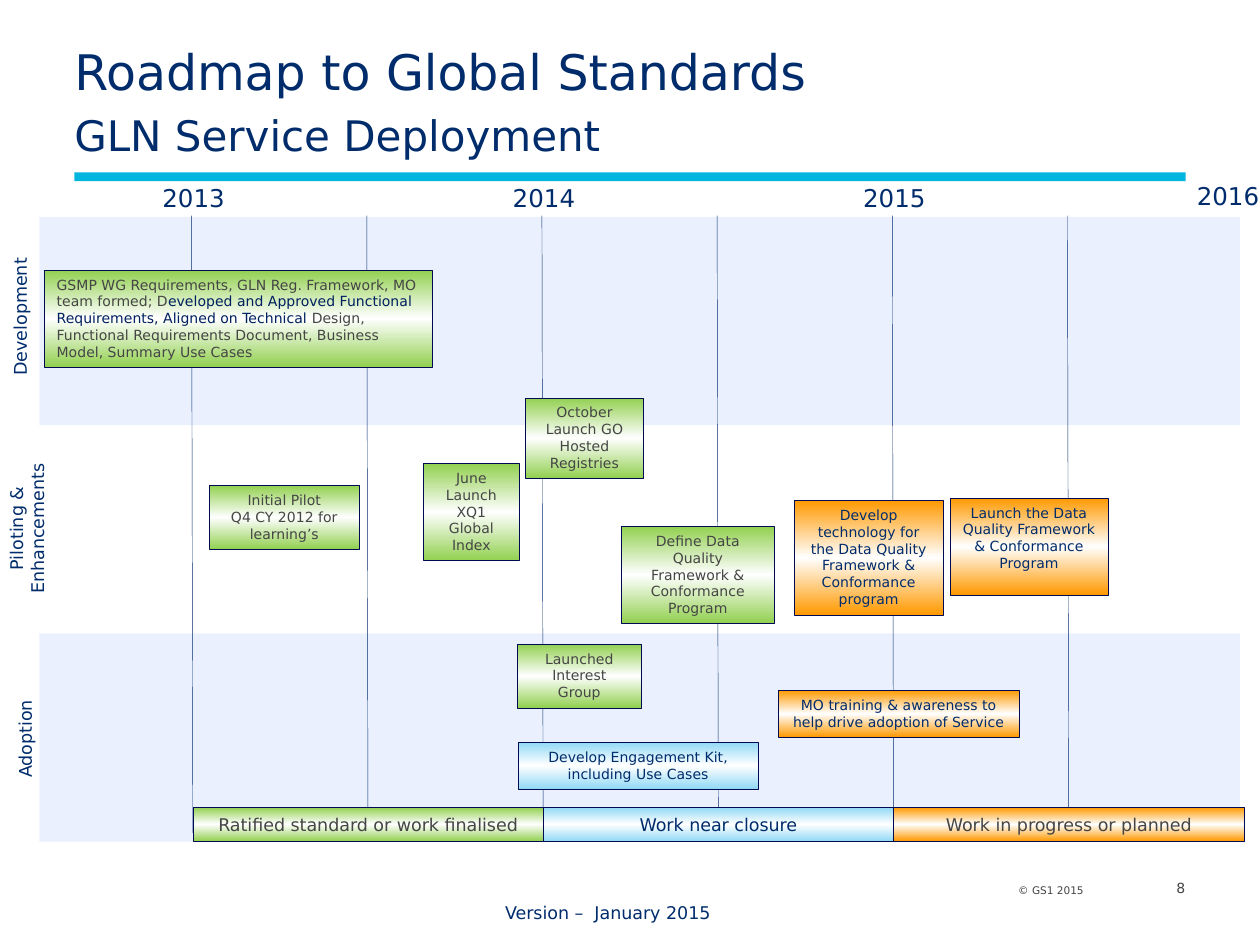
from lxml import etree
from pptx import Presentation
from pptx.dml.color import RGBColor
from pptx.enum.shapes import MSO_CONNECTOR, MSO_SHAPE
from pptx.enum.text import MSO_ANCHOR, MSO_AUTO_SIZE, PP_ALIGN
from pptx.oxml import parse_xml
from pptx.oxml.ns import nsdecls, qn
from pptx.util import Pt

RECT, LINE = MSO_SHAPE.RECTANGLE, MSO_CONNECTOR.STRAIGHT
TOP, MIDDLE = MSO_ANCHOR.TOP, MSO_ANCHOR.MIDDLE
LEFT, CENTER, RIGHT = PP_ALIGN.LEFT, PP_ALIGN.CENTER, PP_ALIGN.RIGHT
GROW, FIXED = MSO_AUTO_SIZE.SHAPE_TO_FIT_TEXT, MSO_AUTO_SIZE.NONE

FONT = "DejaVu Sans"
NAVY = RGBColor(0x00, 0x2C, 0x6C)
DEEP = RGBColor(0x00, 0x20, 0x60)
GREY = RGBColor(0x45, 0x45, 0x45)
OUTLINE = RGBColor(0x00, 0x0A, 0x52)
CYAN = RGBColor(0x00, 0xB6, 0xDE)
BAND = RGBColor(0xEB, 0xF0, 0xFF)
WHITE = RGBColor(0xFF, 0xFF, 0xFF)
GREEN = RGBColor(0x92, 0xD0, 0x50)
BLUE = RGBColor(0x92, 0xD9, 0xF6)
ORANGE = RGBColor(0xFF, 0x99, 0x00)

# Content
TITLE = "Roadmap to Global Standards"
SUBTITLE = "GLN Service Deployment"
YEARS = ["2013", "2014", "2015"]
LEGEND = [
    ("Ratified standard or work finalised", GREEN, GREY),
    ("Work near closure", BLUE, NAVY),
    ("Work in progress or planned", ORANGE, GREY),
]
# Lane name, centre x, centre y, text height
LANES = [
    ("Development", 11.5, 181, 19.4),
    ("Piloting & Enhancements", 21.6, 302, 43.9),
    ("Adoption", 14.4, 422.3, 19.4),
]
SCOPE = [
    ("GSMP WG Requirements, GLN Reg. Framework, MO team formed; D", GREY),
    ("eveloped and Approved Functional Requirements, Aligned on Technical ", DEEP),
    ("Design, Functional Requirements Document, Business Model, "
     "Summary Use Cases", GREY),
]
# Paragraphs, left, top, width, height, fill, text colour
MILESTONES = [
    (["October", "Launch GO Hosted Registries"], 300.2, 227.3, 67.7, 46.1, GREEN, GREY),
    (["June Launch XQ1 Global Index"], 241.9, 264.8, 54.9, 55.6, GREEN, GREY),
    (["Initial Pilot", "Q4 CY 2012 for learning’s"], 119.5, 277.4, 86, 36.4, GREEN, GREY),
    (["Develop Engagement Kit, including Use Cases"], 296.1, 424.2, 137.3, 26.6, BLUE, NAVY),
    (["Launched Interest Group"], 295.6, 368, 70.9, 36.6, GREEN, GREY),
    (["Define Data Quality Framework & Conformance Program"],
     355, 300.8, 87.6, 55.4, GREEN, GREY),
    (["MO training & awareness to help drive adoption of Service"],
     444.8, 394.4, 137.6, 26.9, ORANGE, NAVY),
    (["Develop technology for the Data Quality Framework & Conformance program"],
     453.9, 285.9, 85.1, 65.5, ORANGE, NAVY),
    (["Launch the Data Quality Framework & Conformance Program"],
     542.9, 284.6, 90.3, 55.4, ORANGE, NAVY),
]

# Timeline geometry
AXIS_X, HALF_YEAR = 109.5, 100.1
LANE_X, LANE_Y, LANE_W, LANE_H = 22.5, 124, 686, 119

prs = Presentation()
prs.slide_width, prs.slide_height = Pt(720), Pt(540)
s = prs.slides.add_slide(prs.slide_layouts[5])


def put_text(sp, paragraphs, size, color, align=LEFT, anchor=TOP, wrap=True,
             grow=True, insets=(7.2, 3.6, 7.2, 3.6)):
    tf = sp.text_frame
    tf.word_wrap, tf.vertical_anchor = wrap, anchor
    tf.auto_size = GROW if grow else FIXED
    tf.margin_left, tf.margin_top, tf.margin_right, tf.margin_bottom = map(Pt, insets)
    tf.text = "\n".join(paragraphs)
    for p in tf.paragraphs:
        p.alignment = align
        p.font.name, p.font.size, p.font.color.rgb = FONT, Pt(size), color


def add_label(text, x, y, w, h, size, color, **options):
    sp = s.shapes.add_textbox(Pt(x), Pt(y), Pt(w), Pt(h))
    put_text(sp, [text], size, color, **options)
    return sp


def add_rect(x, y, w, h, color):
    sp = s.shapes.add_shape(RECT, Pt(x), Pt(y), Pt(w), Pt(h))
    sp.shadow.inherit = False
    sp.fill.solid()
    sp.fill.fore_color.rgb = color
    sp.line.fill.background()
    return sp


def add_box(paragraphs, x, y, w, h, fill, color, size=8, align=CENTER):
    sp = add_rect(x, y, w, h, fill)
    # Vertical gradient, white in the middle
    stops = "".join(f'<a:gs pos="{pos}"><a:srgbClr val="{c}"/></a:gs>'
                    for pos, c in ((0, fill), (50000, WHITE), (100000, fill)))
    solid = sp.element.spPr.find(qn("a:solidFill"))
    sp.element.spPr.replace(solid, parse_xml(
        f'<a:gradFill {nsdecls("a")} rotWithShape="1"><a:gsLst>{stops}</a:gsLst>'
        '<a:lin ang="5400000" scaled="0"/></a:gradFill>'))
    sp.line.color.rgb, sp.line.width = OUTLINE, Pt(0.25)
    put_text(sp, paragraphs, size, color, align=align)
    return sp


# Header
HEADING = dict(anchor=MIDDLE, grow=False, insets=(0, 3.6, 7.2, 3.6))
title = s.shapes.title
title.left, title.top, title.width, title.height = Pt(42.5), Pt(5), Pt(634.5), Pt(71.3)
put_text(title, [TITLE], 28, NAVY, **HEADING)
add_rect(42.5, 98.6, 635, 5, CYAN)
put_text(add_rect(42.5, 56.2, 540, 41, WHITE), [SUBTITLE], 24, NAVY, **HEADING)

# Shaded lanes
for row in (0, 2):
    add_rect(LANE_X, LANE_Y + row * LANE_H, LANE_W, LANE_H, BAND)

# Year labels
for i, year in enumerate(YEARS):
    add_label(year, AXIS_X - 23.8 + 2 * i * HALF_YEAR, 100.8, 50.4, 24.2, 14, NAVY, wrap=False)
add_label("2016", 676.8, 99.7, 50.4, 24.2, 14, NAVY, wrap=False)

# Half-year lines
for i in range(6):
    x = AXIS_X + i * HALF_YEAR
    line = s.shapes.add_connector(LINE, Pt(x), Pt(123.3), Pt(x + 0.7), Pt(476))
    line.line.color.rgb, line.line.width = NAVY, Pt(0.25)
    etree.SubElement(line.element.spPr, qn("a:effectLst"))

# Legend
for i, (text, fill, color) in enumerate(LEGEND):
    add_box([text], AXIS_X + 0.7 + 2 * i * HALF_YEAR, 461.4, 2 * HALF_YEAR, 19.4,
            fill, color, size=10)

# Lane names, turned upwards
for name, cx, cy, h in LANES:
    sp = add_label(name, cx - 60.5, cy - h / 2, 121, h, 10, NAVY, align=CENTER)
    sp.rotation = 270

# Milestones
for milestone in MILESTONES:
    add_box(*milestone)
scope = add_box([""], 25.3, 154.3, 222, 55.4, GREEN, GREY, align=LEFT)
for text, color in SCOPE:
    r = scope.text_frame.paragraphs[0].add_run()
    r.text = text
    r.font.name, r.font.size, r.font.color.rgb = FONT, Pt(8), color

# Footer
FOOTER = dict(align=RIGHT, grow=False, insets=(0, 0, 0, 0))
add_label("© GS1 2015", 437.8, 505.4, 181.4, 10.8, 6, GREY, **FOOTER)
add_label("8", 658, 499.7, 19.4, 15.8, 8, GREY, anchor=MIDDLE, **FOOTER)
add_label("Version –  January 2015", 281.5, 511.9, 138.2, 19.4, 10, NAVY, wrap=False)

prs.save("out.pptx")
